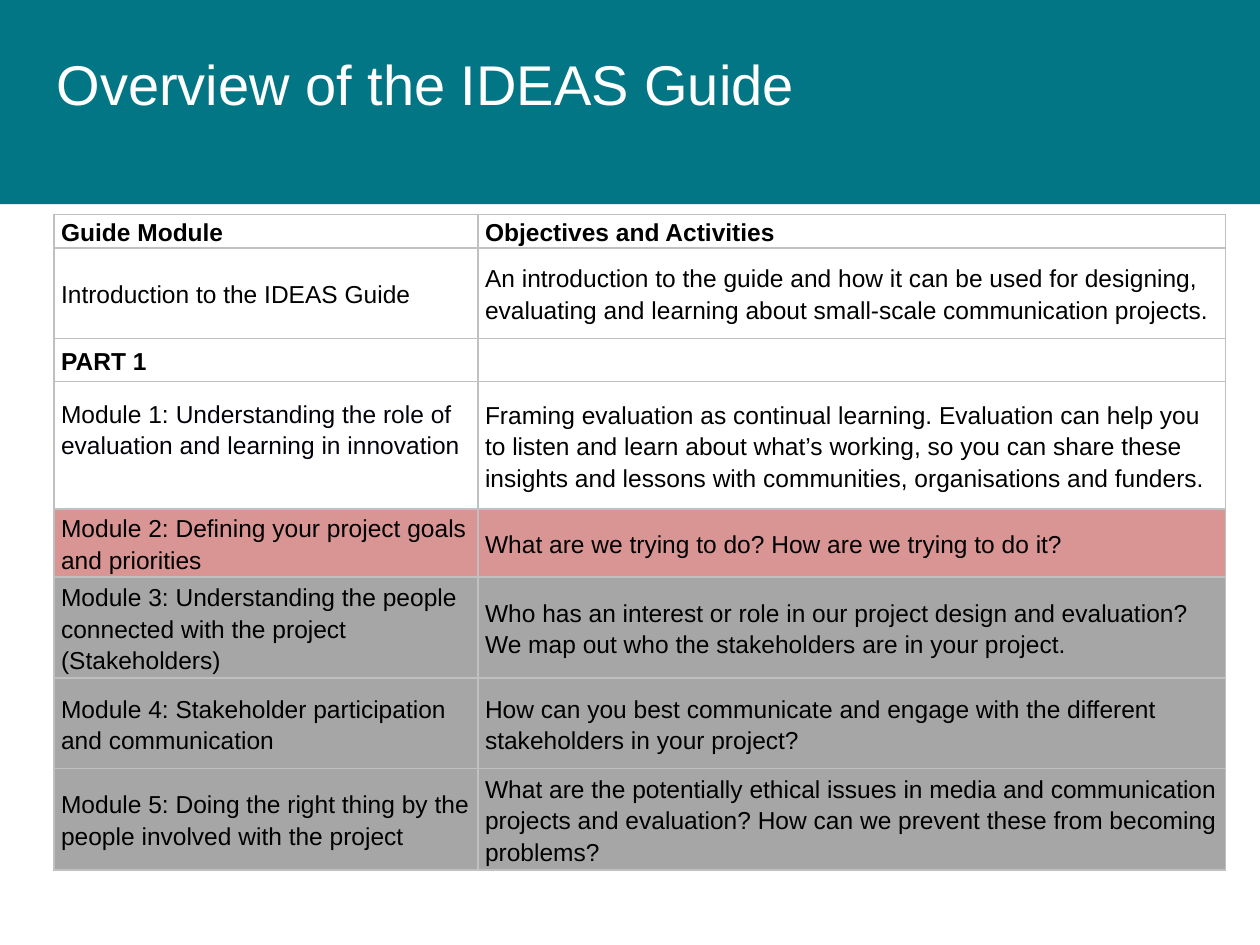
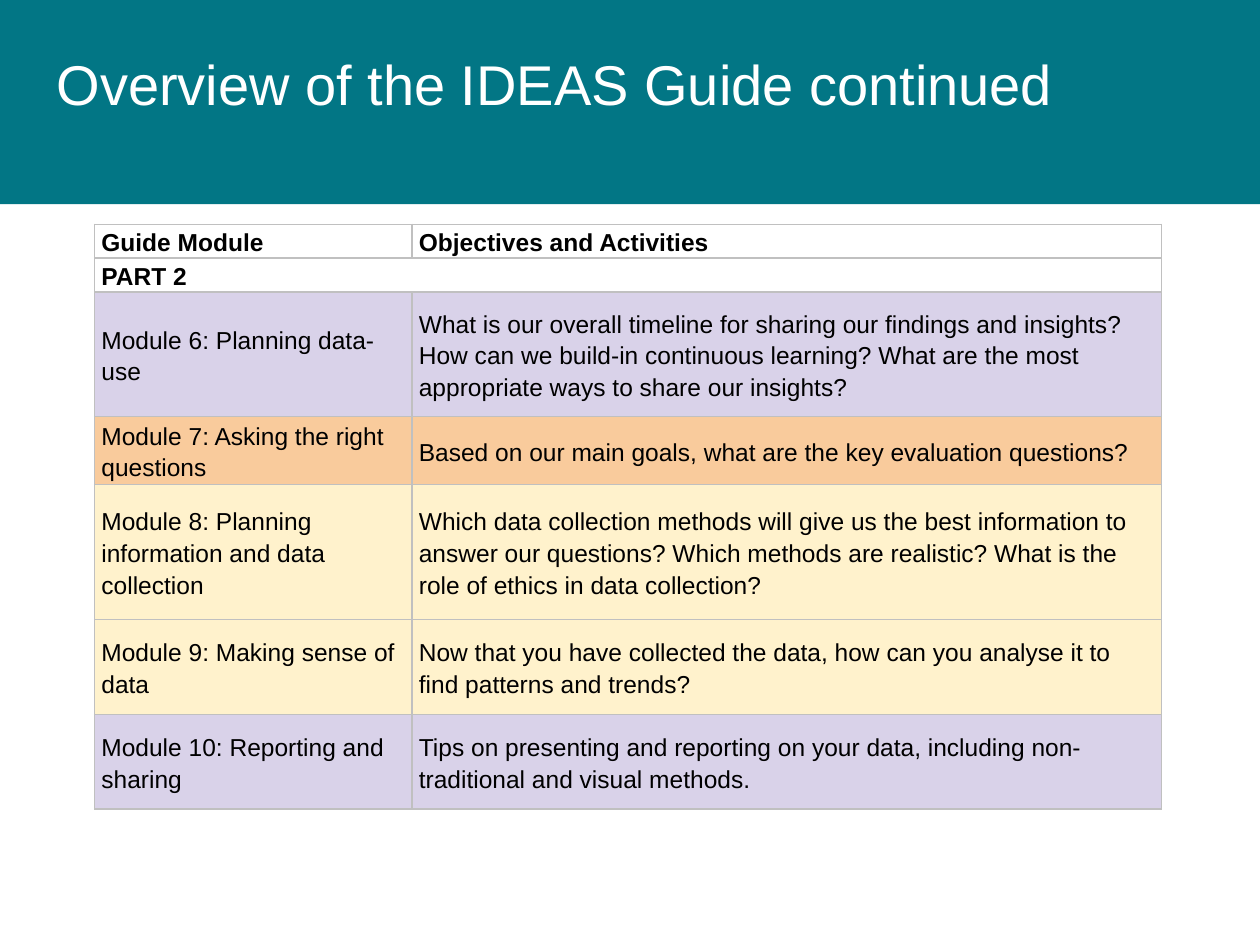
from lxml import etree
from pptx import Presentation
from pptx import util as u
from pptx.dml.color import RGBColor
from pptx.enum import shapes, text
from pptx.oxml import ns

WIDTH, HEIGHT = u.Inches(10), u.Inches(7.5)
FONT = "Arial"
COLOURS = {
    "band": "027685",
    "white": "FFFFFF",
    "black": "000000",
    "ink": "00000A",
    "border": "C0C0C0",
    "red": "D99594",
    "grey": "A6A6A6",
    "purple": "D9D2E9",
    "orange": "F9CB9C",
    "yellow": "FFF2CC",
}
HEADINGS = ("Guide Module", "Objectives and Activities")

# Each row: height in text lines, fill, module, objectives
PART_1 = [
    (1, "white", *HEADINGS),
    (2.67, "white", "Introduction to the IDEAS Guide",
     "An introduction to the guide and how it can be used for designing, "
     "evaluating and learning about small-scale communication projects."),
    (1.28, "white", "PART 1", ""),
    (3.77, "white",
     "Module 1: Understanding the role of evaluation and learning in innovation",
     "Framing evaluation as continual learning. Evaluation can help you to "
     "listen and learn about what’s working, so you can share these insights "
     "and lessons with communities, organisations and funders."),
    (2, "red", "Module 2: Defining your project goals and priorities",
     "What are we trying to do? How are we trying to do it?"),
    (3, "grey",
     "Module 3: Understanding the people connected with the project (Stakeholders)",
     "Who has an interest or role in our project design and evaluation? "
     "We map out who the stakeholders are in your project."),
    (2.67, "grey", "Module 4: Stakeholder participation and communication",
     "How can you best communicate and engage with the different "
     "stakeholders in your project?"),
    (3, "grey",
     "Module 5: Doing the right thing by the people involved with the project",
     "What are the potentially ethical issues in media and communication "
     "projects and evaluation? How can we prevent these from becoming problems?"),
]
PART_2 = [
    (1, "white", *HEADINGS),
    (1, "white", "PART 2", None),
    (3.69, "purple", "Module 6: Planning data-use",
     "What is our overall timeline for sharing our findings and insights? "
     "How can we build-in continuous learning? What are the most appropriate "
     "ways to share our insights?"),
    (2, "orange", "Module 7: Asking the right questions",
     "Based on our main goals, what are the key evaluation questions?"),
    (4, "yellow", "Module 8: Planning information and data collection",
     "Which data collection methods will give us the best information to "
     "answer our questions? Which methods are realistic? What is the role of "
     "ethics in data collection?"),
    (2.8, "yellow", "Module 9: Making sense of data",
     "Now that you have collected the data, how can you analyse it to find "
     "patterns and trends?"),
    (2.8, "purple", "Module 10: Reporting and sharing",
     "Tips on presenting and reporting on your data, including "
     "non-traditional and visual methods."),
]


def across(percent):
    return round(WIDTH * percent / 100)


def down(percent):
    return round(HEIGHT * percent / 100)


LINE = down(3.58)


def colour(name):
    return RGBColor.from_string(COLOURS[name])


def style_font(font, size, name, bold=False):
    font.name = FONT
    font.size = u.Pt(size)
    font.bold = bold
    font.color.rgb = colour(name)


def add_titled_page(deck, title):
    page = deck.slides.add_slide(deck.slide_layouts[6])
    band = page.shapes.add_shape(
        shapes.MSO_SHAPE.RECTANGLE, 0, 0, WIDTH, down(21.6))
    band.shadow.inherit = False
    band.fill.solid()
    band.fill.fore_color.rgb = colour("band")
    band.line.fill.background()

    box = page.shapes.add_textbox(across(3.5), down(3.73), across(90), down(16.53))
    frame = box.text_frame
    frame.word_wrap = True
    frame.margin_top = down(1.47)
    frame.text = title
    style_font(frame.paragraphs[0].runs[0].font, 32, "white")
    return page


def add_borders(cell):
    properties = cell._tc.get_or_add_tcPr()
    for position, side in enumerate(("a:lnL", "a:lnR", "a:lnT", "a:lnB")):
        line = etree.Element(ns.qn(side), w=str(u.Pt(1)))
        fill = etree.SubElement(line, ns.qn("a:solidFill"))
        etree.SubElement(fill, ns.qn("a:srgbClr"), val=COLOURS["border"])
        properties.insert(position, line)


def fill_cell(cell, words, fill, bold):
    cell.fill.solid()
    cell.fill.fore_color.rgb = colour(fill)
    cell.margin_left = cell.margin_right = across(0.55)
    cell.margin_top = cell.margin_bottom = 0
    cell.vertical_anchor = text.MSO_ANCHOR.MIDDLE
    add_borders(cell)
    para = cell.text_frame.paragraphs[0]
    para.text = words
    para.line_spacing = 1.15
    style_font(para.font, 14, "black", bold)
    for span in para.runs:
        style_font(span.font, 14, "black", bold)


def add_module_table(page, left, top, columns, rows):
    total_lines = sum(row[0] for row in rows)
    frame = page.shapes.add_table(
        len(rows), len(columns), across(left), down(top),
        across(sum(columns)), round(LINE * total_lines))
    table = frame.table
    table.first_row = table.horz_banding = False
    for column, width in zip(table.columns, columns):
        column.width = across(width)
    for index, (lines, fill, module, objectives) in enumerate(rows):
        table.rows[index].height = round(LINE * lines)
        bold = index == 0 or module.startswith("PART")
        fill_cell(table.cell(index, 0), module, fill, bold)
        fill_cell(table.cell(index, 1), objectives or "", fill, bold)
        if objectives is None:
            table.cell(index, 0).merge(table.cell(index, 1))
    return table


def tint_after_label(cell, name):
    para = cell.text_frame.paragraphs[0]
    label, rest = para.text.split(": ", 1)
    para.runs[0].text = f"{label}: "
    span = para.add_run()
    span.text = rest
    style_font(span.font, 14, name)


def main():
    deck = Presentation()
    deck.slide_width, deck.slide_height = WIDTH, HEIGHT

    page = add_titled_page(deck, "Overview of the IDEAS Guide")
    table = add_module_table(page, 4.3, 22.67, (33.65, 59.3), PART_1)
    module_1 = table.cell(3, 0)
    tint_after_label(module_1, "ink")
    module_1.margin_bottom = LINE

    page = add_titled_page(deck, "Overview of the IDEAS Guide continued")
    add_module_table(page, 7.5, 23.73, (25.2, 59.5), PART_2)

    deck.save("out.pptx")


if __name__ == "__main__":
    main()
